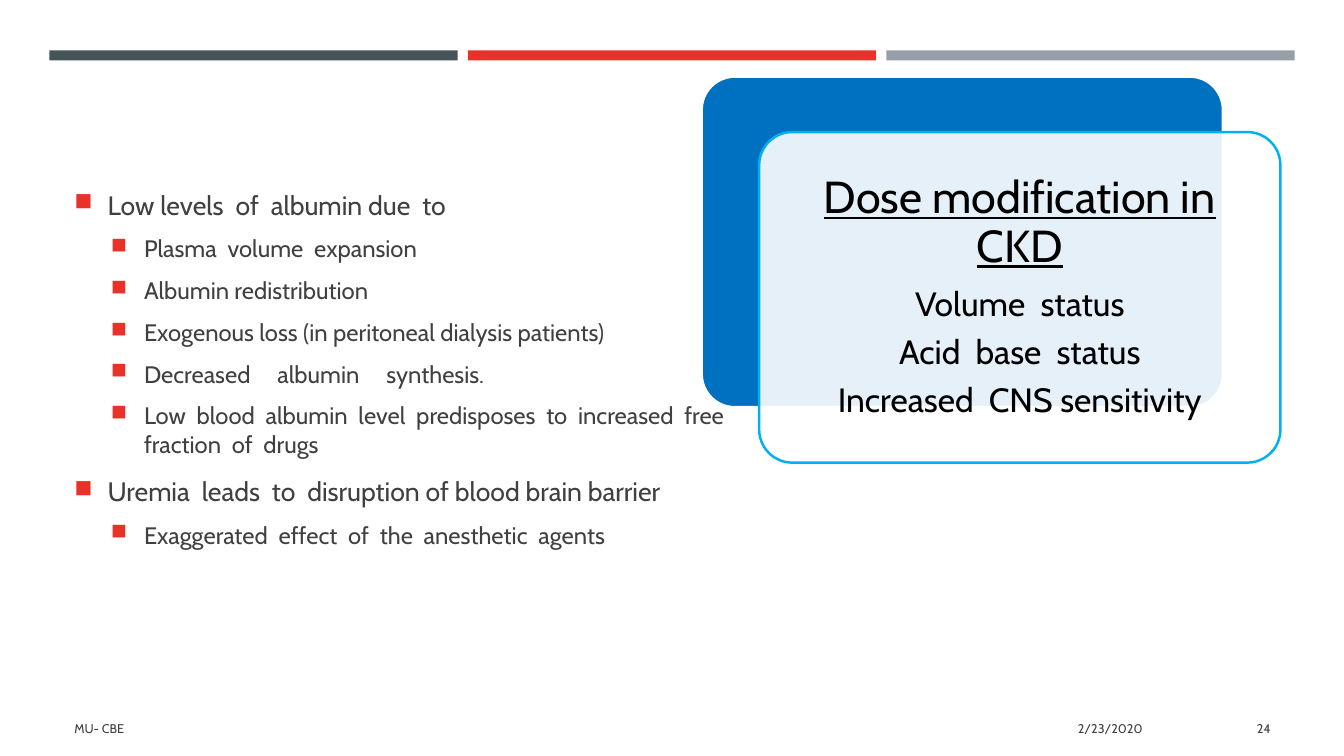
from lxml import etree
from pptx import Presentation
from pptx.dml.color import RGBColor
from pptx.enum import shapes, text
from pptx.oxml import ns
from pptx.util import Inches, Pt

FONT = "Cabin"
COLORS = {
    "slate": "465359",
    "red": "E73129",
    "gray": "969FA7",
    "blue": "0070C0",
    "cyan": "00B0F0",
    "white": "FFFFFF",
    "black": "000000",
    "body": "404040",
}

# Level and wording of each bullet
BULLETS = [
    (0, "Low levels  of  albumin due  to"),
    (1, "Plasma  volume  expansion"),
    (1, "Albumin redistribution"),
    (1, "Exogenous loss (in peritoneal dialysis patients)"),
    (1, "Decreased     albumin     synthesis."),
    (1, "Low  blood  albumin  level  predisposes  to  increased  free  fraction  of  drugs"),
    (0, "Uremia  leads  to  disruption of blood brain barrier"),
    (1, "Exaggerated  effect  of  the  anesthetic  agents"),
]
CARD_HEADING = "Dose modification in CKD"
CARD_LINES = ["Volume  status", "Acid  base  status", "Increased  CNS sensitivity"]


def color(name):
    return RGBColor.from_string(COLORS[name])


def add_box(parent, kind, place, fill, line=None):
    box = parent.shapes.add_shape(kind, *map(Inches, place))
    box.shadow.inherit = False
    box.fill.solid()
    box.fill.fore_color.rgb = color(fill)
    if line:
        box.line.color.rgb = color(line)
        box.line.width = Pt(1.75)
    else:
        box.line.fill.background()
    return box


def set_opacity(box, percent):
    hue = box.fill._xPr.find(ns.qn("a:solidFill"))[0]
    etree.SubElement(hue, ns.qn("a:alpha"), val=str(percent * 1000))


def set_frame(box, margin=None):
    frame = box.text_frame
    frame.word_wrap = True
    frame.vertical_anchor = text.MSO_ANCHOR.MIDDLE
    if margin is not None:
        frame.margin_left = frame.margin_right = Inches(margin)
        frame.margin_top = frame.margin_bottom = Inches(margin)
    return frame


def add_text(frame, wording, size, ink="body", align="LEFT", underline=None,
             spacing=None, before=0, after=0):
    """Fill the first paragraph if it is still empty, otherwise add one."""
    para = frame.paragraphs[0]
    if para.runs:
        para = frame.add_paragraph()
    para.alignment = text.PP_ALIGN[align]
    para.space_before, para.space_after = Pt(before), Pt(after)
    if spacing:
        para.line_spacing = spacing
    span = para.add_run()
    span.text = wording
    span.font.name = FONT
    span.font.size = Pt(size)
    span.font.underline = underline
    span.font.color.rgb = color(ink)
    return para


def add_bullet(para, left):
    props = para._p.get_or_add_pPr()
    props.set("marL", str(Inches(left)))
    props.set("indent", str(Inches(-0.33)))
    hue = etree.SubElement(props, ns.qn("a:buClr"))
    etree.SubElement(hue, ns.qn("a:srgbClr"), val=COLORS["red"])
    etree.SubElement(props, ns.qn("a:buSzPct"), val="92000")
    etree.SubElement(props, ns.qn("a:buChar"), char="■")


def add_bars(page):
    for index, fill in enumerate(("slate", "red", "gray")):
        place = (0.49 + index * 4.15, 0.5, 4.05, 0.1)
        add_box(page, shapes.MSO_SHAPE.RECTANGLE, place, fill)


def add_bullet_list(page):
    place = (0.64, 0.76, 6.8, 5.77)
    frame = set_frame(page.shapes.add_textbox(*map(Inches, place)))
    for level, wording in BULLETS:
        size, spacing, left = ((19, 1.1, 0.33), (17, None, 0.69))[level]
        para = add_text(frame, wording, size, spacing=spacing,
                        before=size * 0.2, after=6)
        para.level = level
        add_bullet(para, left)


def add_card(page):
    group = page.shapes.add_group_shape()
    rounded = shapes.MSO_SHAPE.ROUNDED_RECTANGLE
    back = add_box(group, rounded, (6.96, 0.76, 5.17, 3.28), "blue", "white")
    front = add_box(group, rounded, (7.53, 1.31, 5.17, 3.28), "white", "cyan")
    for box in (back, front):
        box.adjustments[0] = 0.1
    set_opacity(front, 90)
    frame = set_frame(front, margin=0.22)
    style = {"ink": "black", "align": "CENTER", "spacing": 0.9}
    add_text(frame, CARD_HEADING, 32, underline=True, after=11.2, **style)
    for wording in CARD_LINES:
        add_text(frame, wording, 24, after=8.4, **style)


def add_footer(page):
    for left, width, wording, align in (
        (0.64, 7.56, "MU- CBE", "LEFT"),
        (8.32, 3.11, "2/23/2020", "RIGHT"),
        (11.55, 1.15, "24", "RIGHT"),
    ):
        place = (left, 7.03, width, 0.4)
        frame = set_frame(page.shapes.add_textbox(*map(Inches, place)))
        add_text(frame, wording, 9, align=align)


def main():
    deck = Presentation()
    deck.slide_width, deck.slide_height = Inches(13.33), Inches(7.5)
    page = deck.slides.add_slide(deck.slide_layouts.get_by_name("Blank"))
    add_bars(page)
    add_bullet_list(page)
    add_card(page)
    add_footer(page)
    deck.save("out.pptx")


if __name__ == "__main__":
    main()
